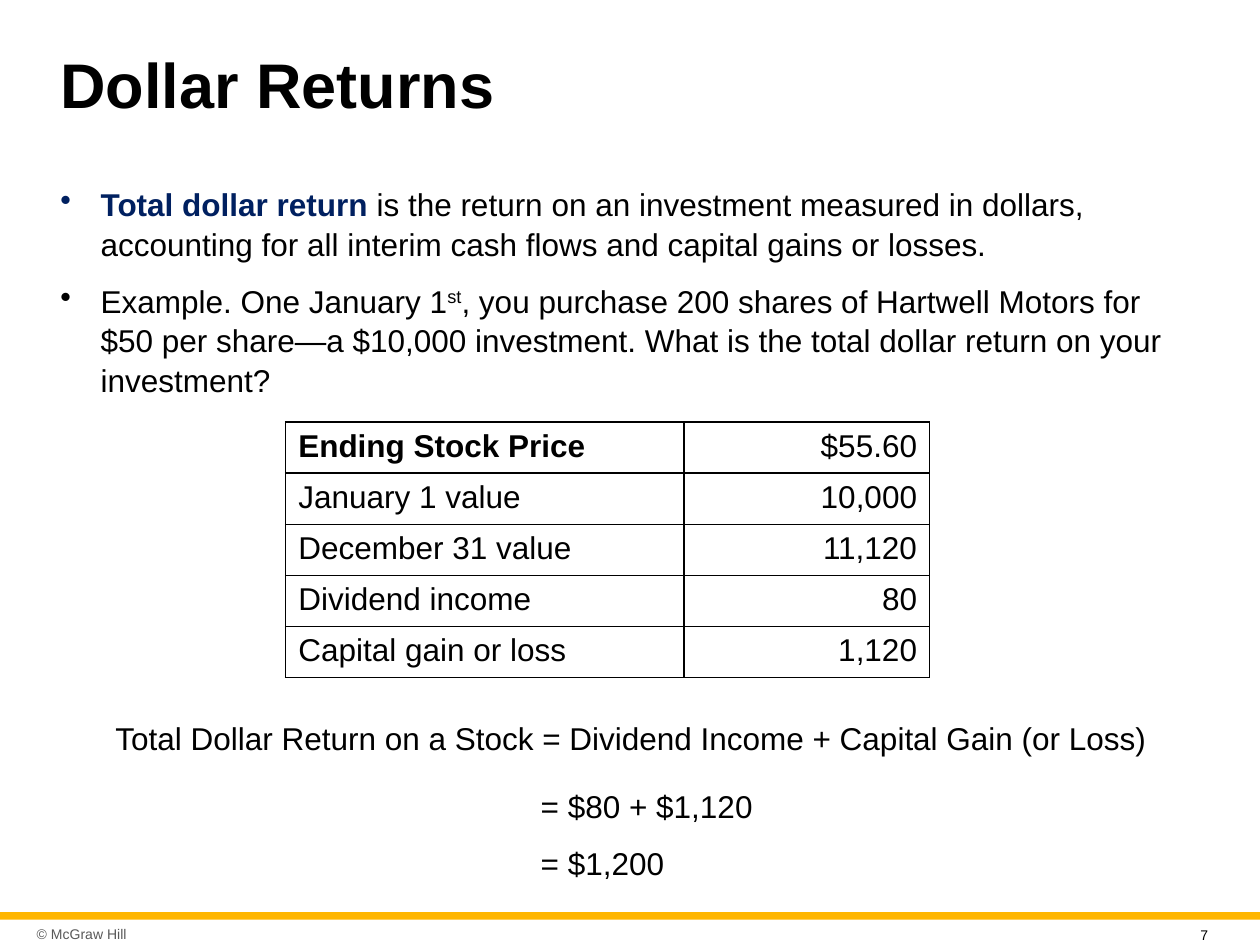
"""Build the Dollar Returns slide with its value table and worked equation."""
from dataclasses import dataclass

import lxml.etree
import pptx
import pptx.dml.color
import pptx.enum.shapes
import pptx.enum.text
import pptx.oxml.ns
import pptx.slide
import pptx.text.text
import pptx.util
from pptx.util import Cm

BLACK = pptx.dml.color.RGBColor(0x00, 0x00, 0x00)
WHITE = pptx.dml.color.RGBColor(0xFF, 0xFF, 0xFF)
NAVY = pptx.dml.color.RGBColor(0x00, 0x20, 0x60)
GRAY = pptx.dml.color.RGBColor(0x59, 0x59, 0x59)
GOLD = pptx.dml.color.RGBColor(0xFF, 0xB6, 0x00)

FONT_NAME = "Arial"
BODY_SIZE = 18
BODY_SPACING = 1.05
LEFT = PP_LEFT = pptx.enum.text.PP_ALIGN.LEFT
CENTER = pptx.enum.text.PP_ALIGN.CENTER
RIGHT = pptx.enum.text.PP_ALIGN.RIGHT
TOP = pptx.enum.text.MSO_ANCHOR.TOP
MIDDLE = pptx.enum.text.MSO_ANCHOR.MIDDLE
CONTENT_LEFT, CONTENT_WIDTH = 0.97, 23.5


@dataclass(frozen=True)
class Span:
    text: str
    color: pptx.dml.color.RGBColor = BLACK
    bold: bool = False
    superscript: bool = False


@dataclass(frozen=True)
class TextBlock:
    paragraphs: tuple[tuple[Span, ...], ...]
    top: float
    height: float
    left: float = CONTENT_LEFT
    width: float = CONTENT_WIDTH
    size: float = BODY_SIZE
    spacing: float = BODY_SPACING
    alignment: pptx.enum.text.PP_ALIGN = LEFT
    anchor: pptx.enum.text.MSO_ANCHOR = TOP
    inset: float = 0.25
    indent: float = 0
    first_indent: float = 0
    bullet: str = ""


@dataclass(frozen=True)
class ValueRow:
    label: str
    value: str
    bold_label: bool = False


TEXT_BLOCKS = (
    TextBlock(((Span("© McGraw Hill", GRAY),),), 18.52, 0.61, 0.61, 3.43,
              size=8, spacing=1, anchor=MIDDLE, inset=0.13),
    TextBlock(((Span("Dollar Returns", bold=True),),), 0.53, 2.51,
              size=36, spacing=0.9, anchor=MIDDLE),
    TextBlock(
        (
            (
                Span("Total dollar return ", NAVY, bold=True),
                Span("is the return on an investment measured in dollars, "
                     "accounting for all interim cash flows and capital gains or losses."),
            ),
            (
                Span("Example. One January 1"),
                Span("st", superscript=True),
                Span(", you purchase 200 shares of Hartwell Motors for $50 per share"
                     "—a $10,000 investment. What is the total dollar return on your "
                     "investment?"),
            ),
        ),
        3.56, 4.47, indent=0.81, first_indent=-0.81, bullet="•",
    ),
    TextBlock(((Span("Total Dollar Return on a Stock = Dividend Income + "
                     "Capital Gain (or Loss)"),),),
              14.33, 1.12, alignment=CENTER),
    TextBlock(((Span("= $80 + $1,120"),), (Span("= $1,200"),)),
              15.7, 2.16, first_indent=9.68),
    TextBlock(((Span("7"),),), 18.54, 0.46, 23.95, 0.99, size=8, spacing=1),
)

VALUE_ROWS = (
    ValueRow("Ending Stock Price", "$55.60", bold_label=True),
    ValueRow("January 1 value", "10,000"),
    ValueRow("December 31 value", "11,120"),
    ValueRow("Dividend income", "80"),
    ValueRow("Capital gain or loss", "1,120"),
)
COLUMN_WIDTHS = (8.03, 4.95)
ROW_HEIGHT = 1.03


def format_run(run: pptx.text.text._Run, size: float, span: Span) -> None:
    """Apply the font, size and emphasis of a span to a run."""
    run.font.name = FONT_NAME
    run.font.size = pptx.util.Pt(size)
    run.font.bold = span.bold
    run.font.color.rgb = span.color
    if span.superscript:
        run.font._element.set("baseline", "30000")


def set_indent(paragraph: pptx.text.text._Paragraph, block: TextBlock) -> None:
    """Set the margin, first-line indent and bullet of a paragraph."""
    properties = paragraph._p.get_or_add_pPr()
    properties.set("marL", str(Cm(block.indent)))
    properties.set("indent", str(Cm(block.first_indent)))
    if block.bullet:
        bullet = lxml.etree.SubElement(properties, pptx.oxml.ns.qn("a:buChar"))
        bullet.set("char", block.bullet)


def add_text_block(slide: pptx.slide.Slide, block: TextBlock) -> None:
    """Draw a text box with its paragraphs and spans."""
    shape = slide.shapes.add_textbox(
        Cm(block.left), Cm(block.top), Cm(block.width), Cm(block.height))
    text_frame = shape.text_frame
    text_frame.word_wrap = True
    text_frame.vertical_anchor = block.anchor
    text_frame.margin_left = text_frame.margin_right = Cm(block.inset)
    text_frame.margin_top = text_frame.margin_bottom = Cm(0.13)
    for index, spans in enumerate(block.paragraphs):
        paragraph = text_frame.add_paragraph() if index else text_frame.paragraphs[0]
        set_indent(paragraph, block)
        paragraph.alignment = block.alignment
        paragraph.line_spacing = block.spacing
        if index:
            paragraph.space_before = pptx.util.Pt(10)
        for span in spans:
            run = paragraph.add_run()
            run.text = span.text
            format_run(run, block.size, span)


def add_borders(cell: pptx.table._Cell) -> None:
    """Give all four sides of a cell a thin black line."""
    properties = cell._tc.get_or_add_tcPr()
    for position, side in enumerate(("a:lnL", "a:lnR", "a:lnT", "a:lnB")):
        line = lxml.etree.Element(pptx.oxml.ns.qn(side), w=str(pptx.util.Pt(1)))
        fill = lxml.etree.SubElement(line, pptx.oxml.ns.qn("a:solidFill"))
        lxml.etree.SubElement(fill, pptx.oxml.ns.qn("a:srgbClr"), val=str(BLACK))
        properties.insert(position, line)


def add_value_table(slide: pptx.slide.Slide, rows: tuple[ValueRow, ...]) -> None:
    """Draw the table of labels and right-aligned values."""
    table = slide.shapes.add_table(
        len(rows), len(COLUMN_WIDTHS), Cm(5.76), Cm(8.51),
        Cm(sum(COLUMN_WIDTHS)), Cm(ROW_HEIGHT * len(rows))).table
    table.first_row = table.horz_banding = False
    for column, width in zip(table.columns, COLUMN_WIDTHS):
        column.width = Cm(width)
    for table_row, row in zip(table.rows, rows):
        table_row.height = Cm(ROW_HEIGHT)
        spans = (Span(row.label, bold=row.bold_label), Span(row.value))
        for cell, span, alignment in zip(table_row.cells, spans, (LEFT, RIGHT)):
            cell.fill.solid()
            cell.fill.fore_color.rgb = WHITE
            add_borders(cell)
            cell.text_frame.text = span.text
            paragraph = cell.text_frame.paragraphs[0]
            paragraph.alignment = alignment
            format_run(paragraph.runs[0], BODY_SIZE, span)


def add_footer_bar(slide: pptx.slide.Slide) -> None:
    """Draw the gold bar above the footer."""
    shape = slide.shapes.add_shape(
        pptx.enum.shapes.MSO_SHAPE.RECTANGLE, Cm(0), Cm(18.39), Cm(25.4), Cm(0.15))
    shape.shadow.inherit = False
    shape.fill.solid()
    shape.fill.fore_color.rgb = GOLD
    shape.line.fill.background()


def main() -> None:
    """Assemble and save the slide."""
    presentation = pptx.Presentation()
    presentation.slide_width, presentation.slide_height = Cm(25.4), Cm(19.05)
    slide = presentation.slides.add_slide(presentation.slide_layouts[6])
    add_footer_bar(slide)
    for block in TEXT_BLOCKS:
        add_text_block(slide, block)
    add_value_table(slide, VALUE_ROWS)
    presentation.save("out.pptx")


if __name__ == "__main__":
    main()
